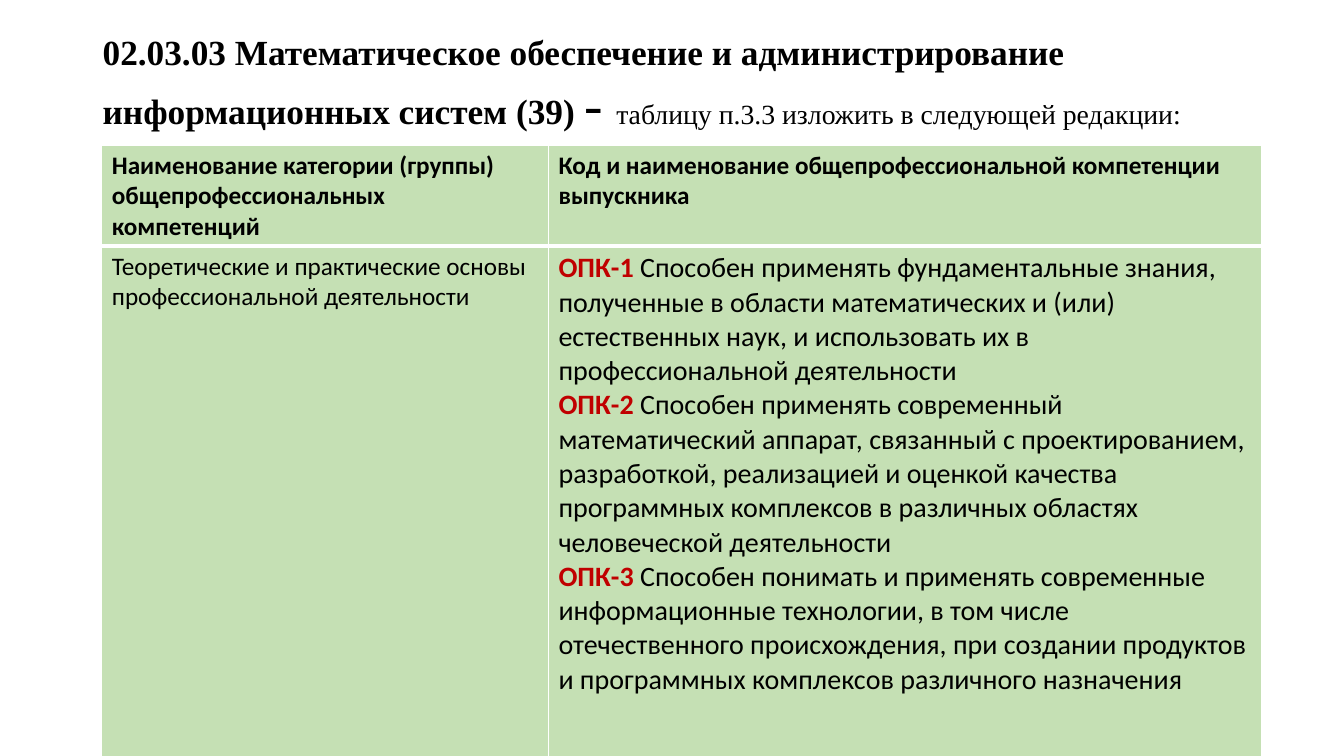
from dataclasses import dataclass

import pptx
import pptx.dml.color
import pptx.enum.text
import pptx.oxml
import pptx.oxml.ns
import pptx.util
from pptx.util import Inches


@dataclass(frozen=True)
class Theme:
    ink: str = "000000"
    code: str = "C00000"
    cell: str = "C5E0B4"
    rule: str = "FFFFFF"
    serif: str = "Times New Roman"
    sans: str = "Calibri"
    title: float = 25.2
    dash: float = 39.6
    note: float = 19.8
    body: float = 18
    skill: float = 20


THEME = Theme()

HEADS = (
    "Наименование категории (группы) общепрофессиональных компетенций",
    "Код и наименование общепрофессиональной компетенции выпускника",
)
GROUP = "Теоретические и практические основы профессиональной деятельности"
SKILLS = (
    ("ОПК-1", "Способен применять фундаментальные знания, полученные в области "
     "математических и (или) естественных наук, и использовать их в "
     "профессиональной деятельности"),
    ("ОПК-2", "Способен применять современный математический аппарат, связанный "
     "с проектированием, разработкой, реализацией и оценкой качества "
     "программных комплексов в различных областях человеческой деятельности"),
    ("ОПК-3", "Способен понимать и применять современные информационные "
     "технологии, в том числе отечественного происхождения, при создании "
     "продуктов и программных комплексов различного назначения"),
)


def add_text(para, text, size=THEME.body, font=THEME.sans, color=THEME.ink, bold=False):
    run = para.add_run()
    run.text = text
    run.font.size = pptx.util.Pt(size)
    run.font.name = font
    run.font.bold = bold
    run.font.color.rgb = pptx.dml.color.RGBColor.from_string(color)


def add_title(slide):
    box = slide.shapes.add_textbox(Inches(0.92), Inches(0.27), Inches(11.5), Inches(1.15))
    frame = box.text_frame
    frame.word_wrap = True
    frame.vertical_anchor = pptx.enum.text.MSO_ANCHOR.TOP
    para = frame.paragraphs[0]
    para.line_spacing = 0.97
    add_text(para, "02.03.03 Математическое обеспечение и администрирование "
             "информационных систем (39) ",
             size=THEME.title, font=THEME.serif, bold=True)
    add_text(para, "- ", size=THEME.dash, font=THEME.serif)
    add_text(para, "таблицу п.3.3 изложить в следующей редакции:",
             size=THEME.note, font=THEME.serif)


def set_edges(cell, **widths):
    """Draw cell borders; keys are L, R, T and B, values are points."""
    props = cell._tc.get_or_add_tcPr()
    for spot, side in enumerate("LRTB"):
        width = pptx.util.Pt(widths.get(side, 1))
        line = pptx.oxml.parse_xml(
            f'<a:ln{side} {pptx.oxml.ns.nsdecls("a")} w="{width}"><a:solidFill>'
            f'<a:srgbClr val="{THEME.rule}"/></a:solidFill></a:ln{side}>')
        props.insert(spot, line)


def style_cell(cell, **widths):
    cell.fill.solid()
    cell.fill.fore_color.rgb = pptx.dml.color.RGBColor.from_string(THEME.cell)
    set_edges(cell, **widths)


def add_grid(slide):
    frame = slide.shapes.add_table(
        2, 2, Inches(1.01), Inches(1.44), Inches(11.5), Inches(6.19))
    table = frame.table
    for col, width in zip(table.columns, (4.43, 7.07)):
        col.width = Inches(width)
    for row, height in zip(table.rows, (0.67, 5.52)):
        row.height = Inches(height)

    for col, head in enumerate(HEADS):
        cell = table.cell(0, col)
        style_cell(cell, B=3)
        add_text(cell.text_frame.paragraphs[0], head, bold=True)
        style_cell(table.cell(1, col), T=3)

    add_text(table.cell(1, 0).text_frame.paragraphs[0], GROUP)
    body = table.cell(1, 1).text_frame
    for spot, (code, skill) in enumerate(SKILLS):
        para = body.add_paragraph() if spot else body.paragraphs[0]
        add_text(para, code, size=THEME.skill, color=THEME.code, bold=True)
        add_text(para, " " + skill, size=THEME.skill)


def main():
    deck = pptx.Presentation()
    deck.slide_width = Inches(13.33)
    deck.slide_height = Inches(7.5)
    slide = deck.slides.add_slide(deck.slide_layouts[6])
    add_title(slide)
    add_grid(slide)
    deck.save("out.pptx")


if __name__ == "__main__":
    main()
